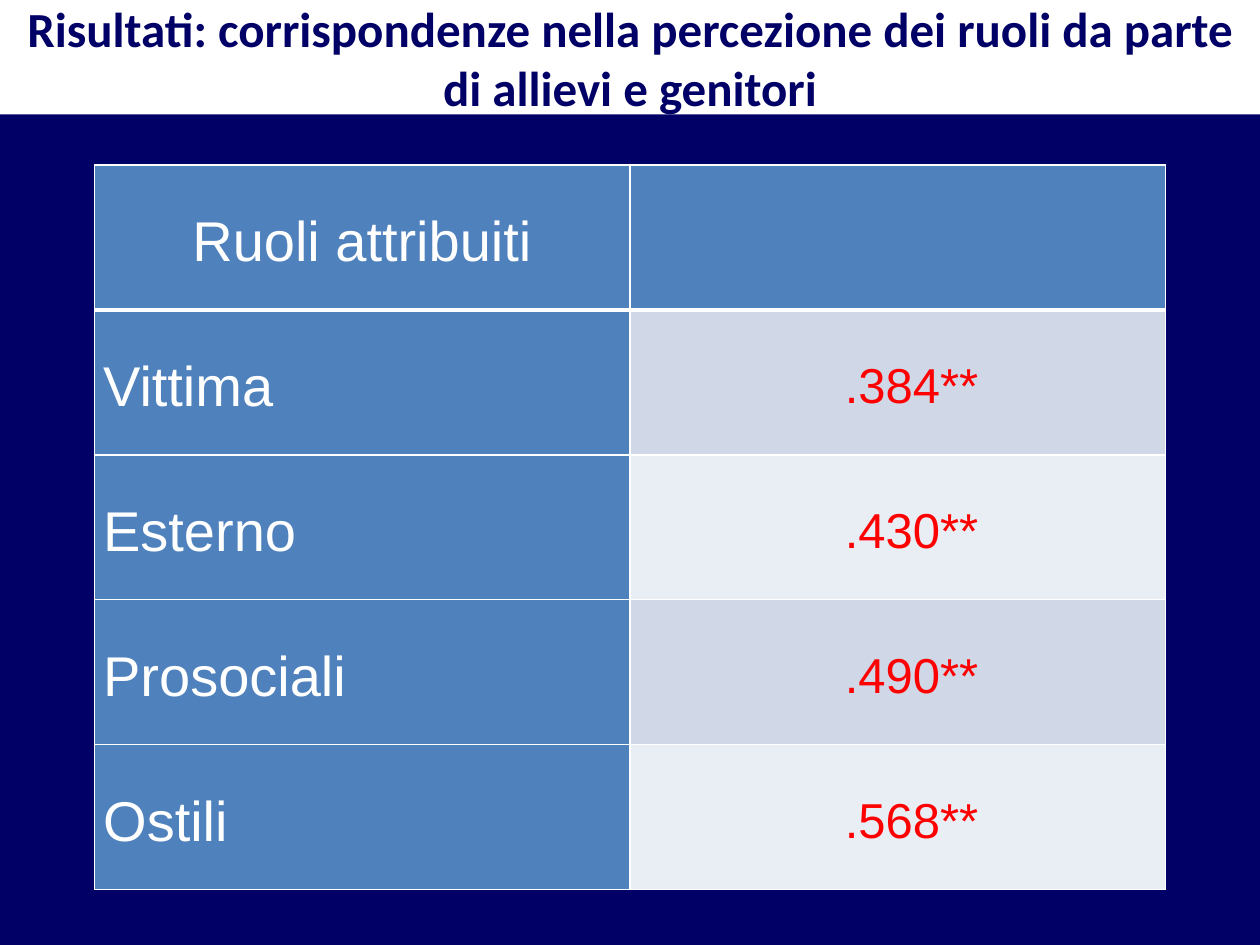
from lxml import etree
from pptx import Presentation
from pptx.dml.color import RGBColor
from pptx.enum.shapes import MSO_SHAPE
from pptx.enum.text import MSO_ANCHOR, PP_ALIGN
from pptx.oxml.ns import qn
from pptx.util import Cm, Pt

RECTANGLE = MSO_SHAPE.RECTANGLE
MIDDLE = MSO_ANCHOR.MIDDLE
LEFT, CENTER = PP_ALIGN.LEFT, PP_ALIGN.CENTER

NAVY, WHITE, RED = "000066", "FFFFFF", "FF0000"
BLUE = "4F81BD"
BANDS = ("D0D8E8", "E9EDF4")

TITLE = "Risultati: corrispondenze nella percezione dei ruoli da parte di allievi e genitori"
HEADING = "Ruoli attribuiti"
CORRELATIONS = [
    ("Vittima", ".384**"),
    ("Esterno", ".430**"),
    ("Prosociali", ".490**"),
    ("Ostili", ".568**"),
]
CELL_INSET = 0.18
VALUE_INDENT = 0.55


def paint(fill, color):
    fill.solid()
    fill.fore_color.rgb = RGBColor.from_string(color)


def write(frame, text, size, color, font, align, bold=False):
    frame.text = text
    paragraph = frame.paragraphs[0]
    paragraph.alignment = align
    for run in paragraph.runs:
        run.font.name = font
        run.font.size = Pt(size)
        run.font.bold = bold
        run.font.color.rgb = RGBColor.from_string(color)
    return paragraph


def add_title(slide, width):
    banner = slide.shapes.add_shape(RECTANGLE, 0, 0, width, Cm(2.31))
    banner.shadow.inherit = False
    paint(banner.fill, WHITE)
    banner.line.fill.background()
    banner.text_frame.word_wrap = True
    banner.text_frame.vertical_anchor = MIDDLE
    write(banner.text_frame, TITLE, 28, NAVY, "Calibri", CENTER, bold=True)


def set_borders(cell, top, bottom):
    properties = cell._tc.get_or_add_tcPr()
    for side, points in (("L", 1), ("R", 1), ("T", top), ("B", bottom)):
        border = etree.SubElement(properties, qn(f"a:ln{side}"), w=str(Pt(points)))
        solid = etree.SubElement(border, qn("a:solidFill"))
        etree.SubElement(solid, qn("a:srgbClr"), val=WHITE)


def fill_cell(cell, text, background, size=32, color=WHITE, align=LEFT,
              indent=0, top=1, bottom=1):
    set_borders(cell, top, bottom)
    paint(cell.fill, background)
    cell.vertical_anchor = MIDDLE
    cell.margin_left = Cm(CELL_INSET + indent)
    cell.margin_right = Cm(CELL_INSET)
    cell.margin_top = cell.margin_bottom = 0
    paragraph = write(cell.text_frame, text, size, color, "Arial", align)
    paragraph.line_spacing = 1.15


def add_correlation_table(slide):
    frame = slide.shapes.add_table(
        len(CORRELATIONS) + 1, 2, Cm(1.9), Cm(3.33), Cm(21.6), Cm(14.6))
    table = frame.table
    for column, heading in enumerate((HEADING, "")):
        fill_cell(table.cell(0, column), heading, BLUE, align=CENTER, bottom=3)
    for row, (role, value) in enumerate(CORRELATIONS, start=1):
        top = 3 if row == 1 else 1
        fill_cell(table.cell(row, 0), role, BLUE, top=top)
        fill_cell(table.cell(row, 1), value, BANDS[(row - 1) % 2], size=28,
                  color=RED, align=CENTER, indent=VALUE_INDENT, top=top)


def main():
    presentation = Presentation()
    presentation.slide_width = Cm(25.4)
    presentation.slide_height = Cm(19.05)
    slide = presentation.slides.add_slide(presentation.slide_layouts[6])
    paint(slide.background.fill, NAVY)
    add_title(slide, presentation.slide_width)
    add_correlation_table(slide)
    presentation.save("out.pptx")


if __name__ == "__main__":
    main()
